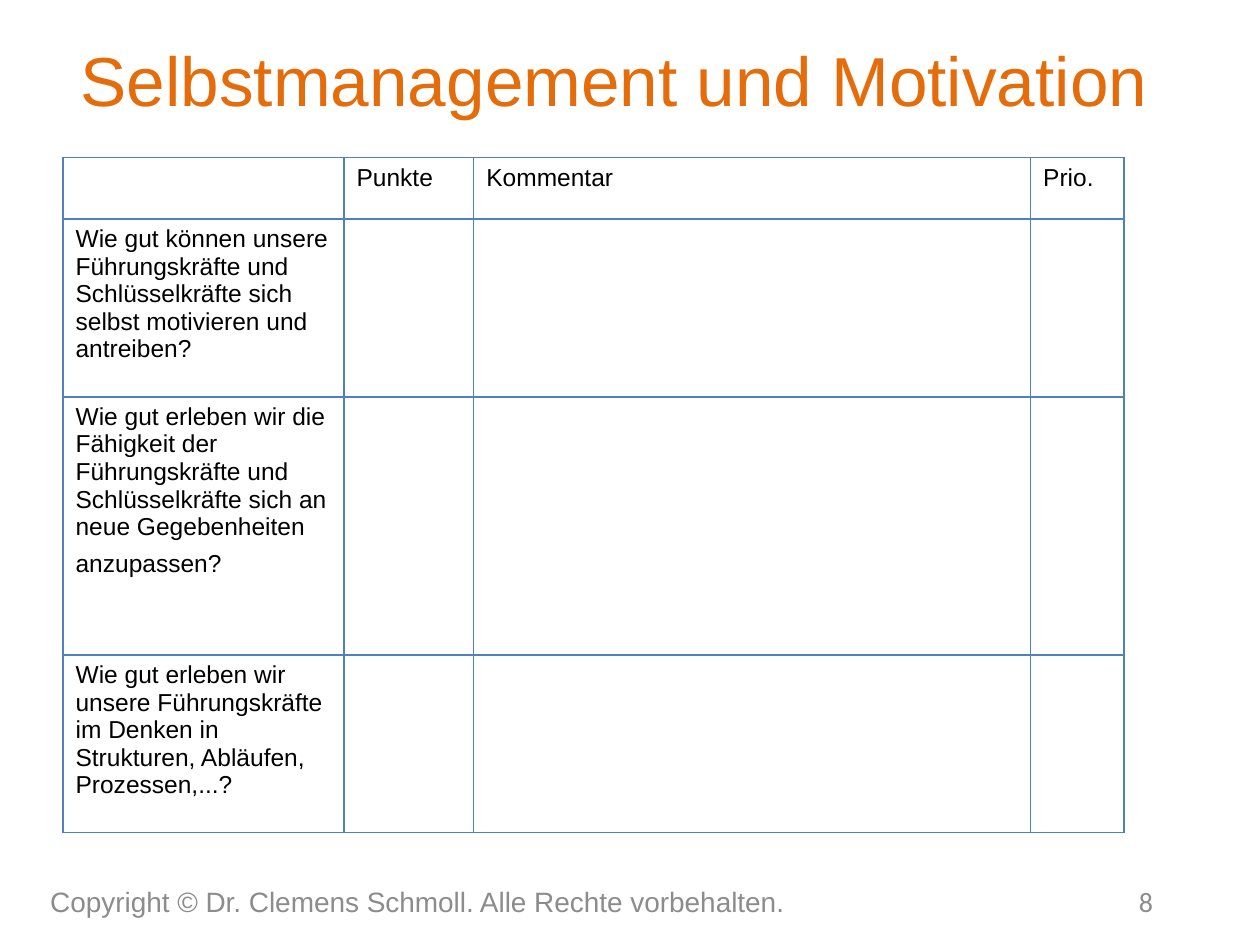
from lxml import etree
from pptx import Presentation
from pptx import util as u
from pptx.dml.color import RGBColor
from pptx.enum import text
from pptx.oxml.ns import qn

ORANGE, BLUE, GREY, BLACK = "E46C0A", "4F81BD", "8C8C8C", "000000"
COLUMNS = [2.23, 1.03, 4.42, 0.74]
ROWS = [0.49, 1.41, 2.05, 1.41]
HEADINGS = ["", "Punkte", "Kommentar", "Prio."]
QUESTIONS = [
    [("Wie gut können unsere Führungskräfte und Schlüsselkräfte sich "
      "selbst motivieren und antreiben?", 14)],
    [("Wie gut erleben wir die Fähigkeit der Führungskräfte und "
      "Schlüsselkräfte sich an", 14),
     ("\n", 14),
     ("neue Gegebenheiten anzupassen?", 14),
     (" ", 20)],
    [("Wie gut erleben wir unsere Führungskräfte im Denken in "
      "Strukturen, Abläufen, Prozessen,...?", 14)],
]


def colour(value):
    return RGBColor.from_string(value)


def add_run(paragraph, words, size, shade, face="Arial"):
    if words == "\n":
        paragraph.add_line_break()
        return
    run = paragraph.add_run()
    run.text = words
    run.font.size = u.Pt(size)
    run.font.name = face
    run.font.color.rgb = colour(shade)


def add_line_of_text(slide, place, words, size, shade, align, face="Arial"):
    box = slide.shapes.add_textbox(*[u.Inches(length) for length in place])
    frame = box.text_frame
    frame.word_wrap = True
    frame.vertical_anchor = text.MSO_ANCHOR.MIDDLE
    paragraph = frame.paragraphs[0]
    paragraph.alignment = align
    add_run(paragraph, words, size, shade, face)


def add_borders(cell, shade):
    properties = cell._tc.get_or_add_tcPr()
    for position, side in enumerate(("a:lnL", "a:lnR", "a:lnT", "a:lnB")):
        line = etree.Element(qn(side), w=str(u.Pt(1)))
        fill = etree.SubElement(line, qn("a:solidFill"))
        etree.SubElement(fill, qn("a:srgbClr"), val=shade)
        properties.insert(position, line)


def add_questionnaire(slide, left, top):
    table = slide.shapes.add_table(
        len(ROWS), len(COLUMNS), u.Inches(left), u.Inches(top),
        u.Inches(sum(COLUMNS)), u.Inches(sum(ROWS))).table
    table.first_row = False
    table.horz_banding = False
    for column, width in zip(table.columns, COLUMNS):
        column.width = u.Inches(width)
    for row, height in zip(table.rows, ROWS):
        row.height = u.Inches(height)
    for cell in table.iter_cells():
        cell.fill.background()
        add_borders(cell, BLUE)
    for index, heading in enumerate(HEADINGS):
        if heading:
            add_run(table.cell(0, index).text_frame.paragraphs[0],
                    heading, 14, BLACK)
    for index, question in enumerate(QUESTIONS, 1):
        paragraph = table.cell(index, 0).text_frame.paragraphs[0]
        for words, size in question:
            add_run(paragraph, words, size, BLACK)


def main():
    deck = Presentation()
    deck.slide_width, deck.slide_height = u.Inches(10), u.Inches(7.5)
    slide = deck.slides.add_slide(deck.slide_layouts[6])
    add_line_of_text(slide, (0.5, 0, 8.75, 1.25),
                     "Selbstmanagement und Motivation", 39.6, ORANGE,
                     text.PP_ALIGN.CENTER)
    add_line_of_text(slide, (6.92, 6.95, 2.33, 0.4), "8", 16, GREY,
                     text.PP_ALIGN.RIGHT, "Calibri")
    add_questionnaire(slide, 0.5, 1.25)
    add_line_of_text(slide, (0.3, 6.95, 6.36, 0.4),
                     "Copyright © Dr. Clemens Schmoll. Alle Rechte vorbehalten.",
                     16, GREY, text.PP_ALIGN.LEFT)
    deck.save("out.pptx")


if __name__ == "__main__":
    main()
